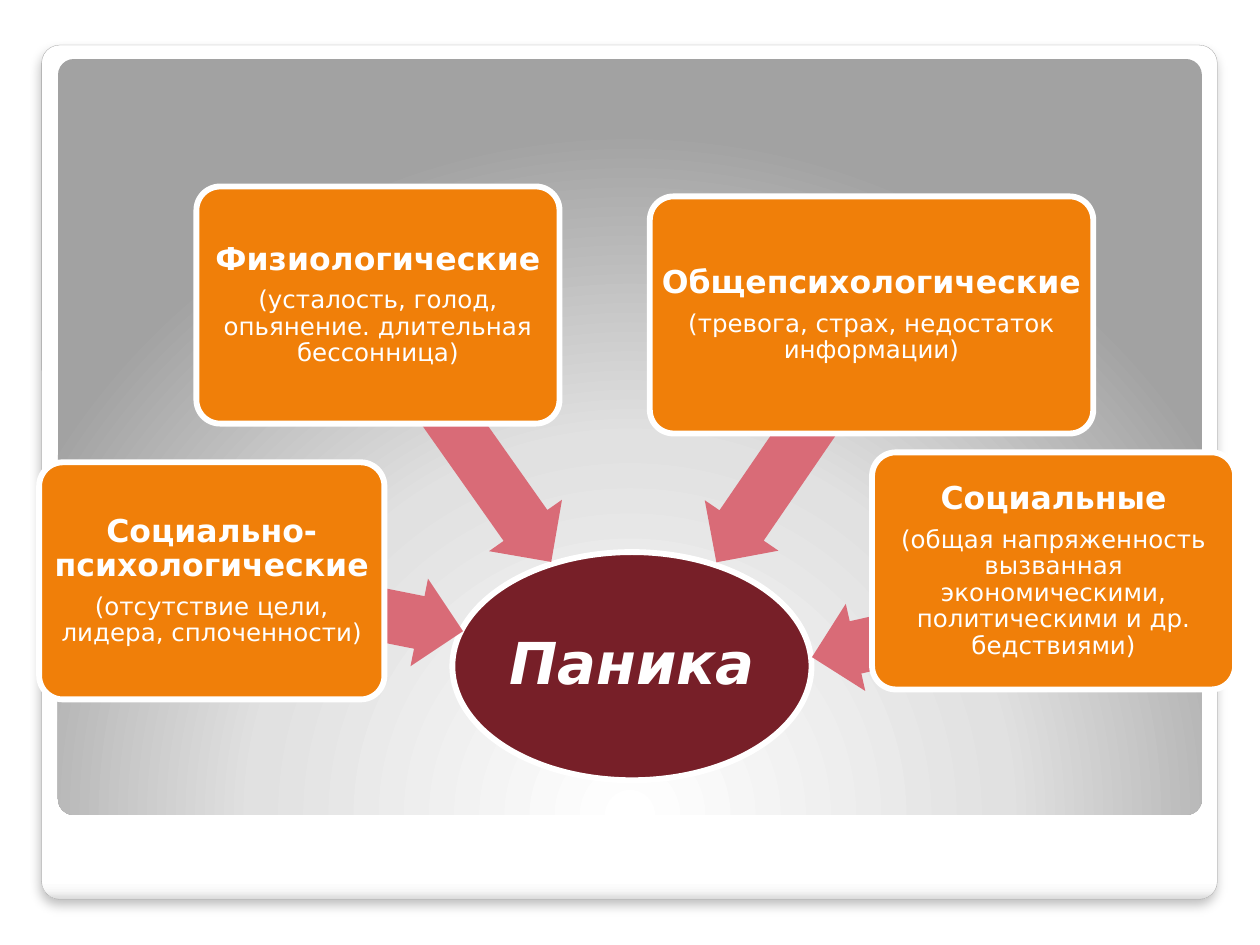
import pptx
import pptx.util
import pptx.dml.color
import pptx.enum.shapes
import pptx.enum.text
import pptx.oxml
import pptx.oxml.ns

Cm = pptx.util.Cm
Pt = pptx.util.Pt
SHAPE = pptx.enum.shapes.MSO_SHAPE
NS = pptx.oxml.ns.nsdecls("a")
COLORS = {"white": "FFFFFF", "edge": "A4A4A4", "center": "771F28",
          "arrow": "D96B77", "card": "F07F09", "shadow": "000000"}

deck = pptx.Presentation()
deck.slide_width, deck.slide_height = Cm(25.4), Cm(19.05)
slide = deck.slides.add_slide(deck.slide_layouts[6])


def add_block(kind, box, adjustments=(), fill=None, line=None, line_width=3.35):
    block = slide.shapes.add_shape(kind, *[Cm(v) for v in box])
    block.shadow.inherit = False
    for i, value in enumerate(adjustments):
        block.adjustments[i] = value
    if fill:
        block.fill.solid()
        block.fill.fore_color.rgb = pptx.dml.color.RGBColor.from_string(COLORS[fill])
    if line:
        block.line.color.rgb = pptx.dml.color.RGBColor.from_string(COLORS[line])
        block.line.width = Pt(line_width)
    else:
        block.line.fill.background()
    return block


def write_lines(block, inset, lines):
    frame = block.text_frame
    frame.word_wrap = True
    frame.vertical_anchor = pptx.enum.text.MSO_ANCHOR.MIDDLE
    frame.margin_left = frame.margin_right = Cm(inset)
    frame.margin_top = frame.margin_bottom = Cm(inset)
    for i, (text, size, bold, italic) in enumerate(lines):
        paragraph = frame.paragraphs[0] if i == 0 else frame.add_paragraph()
        paragraph.alignment = pptx.enum.text.PP_ALIGN.CENTER
        paragraph.line_spacing = 0.9
        paragraph.space_after = Pt(6.3)
        run = paragraph.add_run()
        run.text = text
        run.font.name = "DejaVu Sans"
        run.font.size = Pt(size)
        run.font.bold, run.font.italic = bold, italic
        run.font.color.rgb = pptx.dml.color.RGBColor.from_string(COLORS["white"])


# Background panels with gradients
frame_panel = add_block(SHAPE.ROUNDED_RECTANGLE, (0.84, 0.91, 23.7, 17.22), [0.021],
                        line="edge", line_width=0.16)
inner_panel = add_block(SHAPE.ROUNDED_RECTANGLE, (1.17, 1.19, 23.06, 15.24), [0.021])
gradients = [
    (frame_panel, [(0, "FFFFFF"), (98, "FFFFFF"), (99, "F7F7F7"), (100, "DADADA")],
     '<a:lin ang="5400000" scaled="0"/>'),
    (inner_panel, [(0, "FFFFFF"), (55, "E1E1E1"), (100, "A2A2A2")],
     '<a:path path="circle"><a:fillToRect l="50000" t="175000" r="50000" b="-75000"/></a:path>'),
]
for panel, stops, direction in gradients:
    stop_xml = "".join(f'<a:gs pos="{pos * 1000}"><a:srgbClr val="{color}"/></a:gs>'
                       for pos, color in stops)
    panel_props = panel.element.spPr
    panel_props.find(pptx.oxml.ns.qn("a:prstGeom")).addnext(pptx.oxml.parse_xml(
        f'<a:gradFill {NS} rotWithShape="1"><a:gsLst>{stop_xml}</a:gsLst>{direction}</a:gradFill>'))

# Soft shadow below the outer panel
frame_effects = frame_panel.element.spPr.find(pptx.oxml.ns.qn("a:effectLst"))
frame_effects.append(pptx.oxml.parse_xml(
    f'<a:outerShdw {NS} blurRad="{Pt(6)}" dist="{Pt(4)}" dir="5400000" algn="t" rotWithShape="0">'
    f'<a:srgbClr val="{COLORS["shadow"]}"><a:alpha val="25000"/></a:srgbClr></a:outerShdw>'))

# Central topic
panic = add_block(SHAPE.OVAL, (9.12, 11.13, 7.24, 4.6), fill="center", line="white")
write_lines(panic, 0.05, [("Паника", 33, True, True)])

# Causes: card (left, top, width), arrow (left, top, width, rotation), heading, details
ARROW_HEIGHT, CARD_HEIGHT = 1.8, 4.78
causes = [
    ((0.79, 9.32, 6.96), (4.55, 11.35, 4.83, 191.3), "Социально-психологические",
     "(отсутствие цели, лидера, сплоченности)"),
    ((3.96, 3.76, 7.32), (6.43, 8, 5.94, 234.8), "Физиологические",
     "(усталость, голод, опьянение. длительная бессонница)"),
    ((13.1, 3.96, 8.94), (13.21, 8.1, 5.66, 304.4), "Общепсихологические",
     "(тревога, страх, недостаток информации)"),
    ((17.58, 9.12, 7.32), (16.31, 11.81, 4.93, 347.4), "Социальные",
     "(общая напряженность вызванная экономическими, политическими и др. бедствиями)"),
]
for card_box, (*arrow_box, rotation), heading, details in causes:
    arrow = add_block(SHAPE.LEFT_ARROW, (*arrow_box, ARROW_HEIGHT), [0.6, 0.5], "arrow")
    arrow.rotation = rotation
    card = add_block(SHAPE.ROUNDED_RECTANGLE, (*card_box, CARD_HEIGHT), [0.1], "card", "white")
    write_lines(card, 0.1, [(heading, 18, True, False), (details, 14, False, False)])

deck.save("out.pptx")
